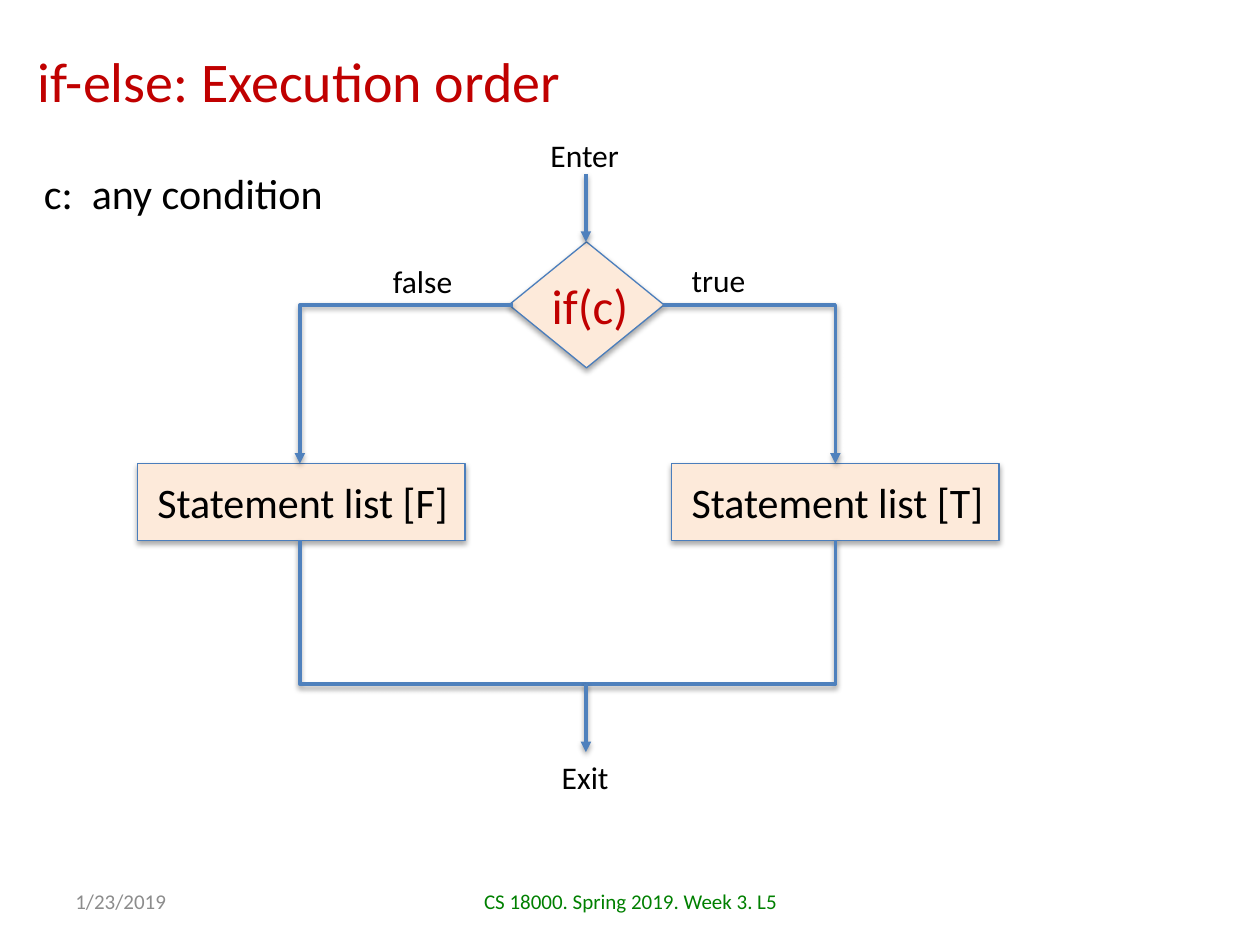
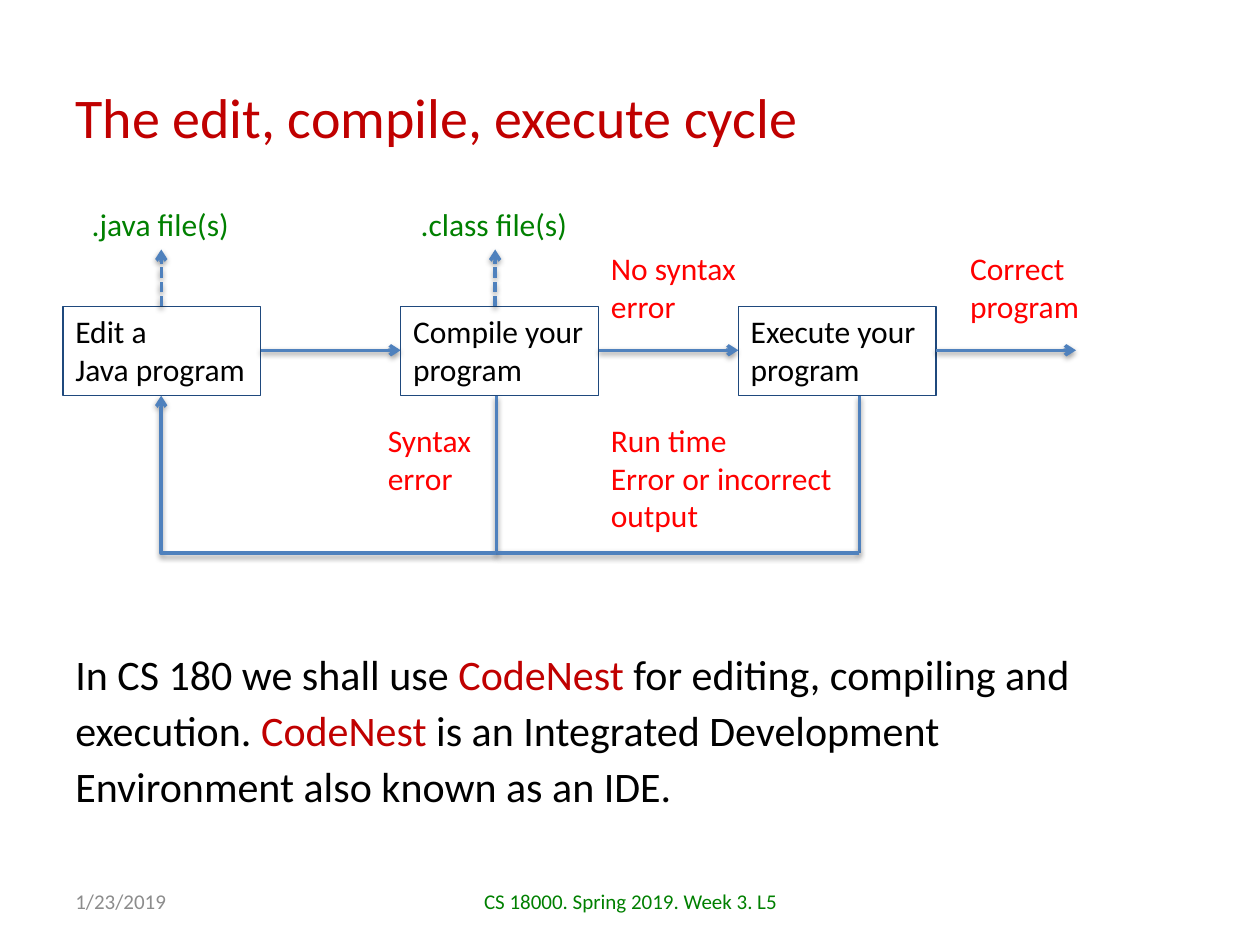
from dataclasses import dataclass

from lxml import etree
from pptx import Presentation
from pptx.dml.color import RGBColor
from pptx.enum.dml import MSO_LINE
from pptx.enum.shapes import MSO_CONNECTOR, MSO_SHAPE
from pptx.enum.text import MSO_ANCHOR, PP_ALIGN
from pptx.oxml.ns import qn
from pptx.util import Emu, Pt

PX = 9144  # one px is a hundredth of an inch
STRAIGHT, ELBOW = MSO_CONNECTOR.STRAIGHT, MSO_CONNECTOR.ELBOW
DIAMOND, RECTANGLE = MSO_SHAPE.DIAMOND, MSO_SHAPE.RECTANGLE
LEFT, CENTER = PP_ALIGN.LEFT, PP_ALIGN.CENTER
TOP, MIDDLE = MSO_ANCHOR.TOP, MSO_ANCHOR.MIDDLE
SHORT_DASH = MSO_LINE.SQUARE_DOT


@dataclass(frozen=True)
class Theme:
    font: str = "Calibri"
    ink: str = "000000"
    title: str = "C00000"
    alert: str = "FF0000"
    green: str = "008000"
    grey: str = "8C8C8C"
    peach: str = "FDEADA"
    node_line: str = "4B7EBC"
    step_line: str = "1F497D"
    wire: str = "4F81BD"
    title_size: int = 32
    condition_size: int = 28
    body_size: int = 24
    label_size: int = 18
    footer_size: int = 12
    wire_width: float = 2
    outline_width: float = 0.75


THEME = Theme()


@dataclass(frozen=True)
class Area:
    left: int
    top: int
    width: int
    height: int

    def emu(self) -> list[Emu]:
        return [Emu(n * PX) for n in (self.left, self.top, self.width, self.height)]


@dataclass(frozen=True)
class Span:
    text: str
    color: str = THEME.ink


@dataclass(frozen=True)
class Label:
    """Text in an area; every entry of lines is one paragraph of spans."""
    area: Area
    lines: list[list[Span]]
    size: int = THEME.label_size
    align: PP_ALIGN = LEFT
    anchor: MSO_ANCHOR = TOP
    wrap: bool = False
    spacing: int = 0
    tab: int = 0


@dataclass(frozen=True)
class Wire:
    """A line; an elbow leaves its start horizontally."""
    start: tuple[int, int]
    end: tuple[int, int]
    kind: MSO_CONNECTOR = STRAIGHT
    arrow: str = ""
    dashed: bool = False


def plain(area: Area, *texts: str, color: str = THEME.ink, size: int = THEME.label_size) -> Label:
    return Label(area, [[Span(text, color)] for text in texts], size)


# Drawing functions

def rgb(color: str) -> RGBColor:
    return RGBColor.from_string(color)


def cast_shadow(item, distance: int, opacity: int) -> None:
    effects = etree.SubElement(item._element.spPr, qn("a:effectLst"))
    shadow = etree.SubElement(effects, qn("a:outerShdw"), blurRad="40000",
                              dist=str(distance), dir="5400000", rotWithShape="0")
    color = etree.SubElement(shadow, qn("a:srgbClr"), val="000000")
    etree.SubElement(color, qn("a:alpha"), val=str(opacity * 1000))


def write(frame, label: Label) -> None:
    frame.word_wrap = label.wrap
    frame.vertical_anchor = label.anchor
    for index, spans in enumerate(label.lines):
        para = frame.add_paragraph() if index else frame.paragraphs[0]
        para.alignment = label.align
        if label.spacing:
            para.line_spacing = Pt(label.spacing)
        if label.tab:
            tabs = etree.SubElement(para._p.get_or_add_pPr(), qn("a:tabLst"))
            etree.SubElement(tabs, qn("a:tab"), pos=str(label.tab * PX), algn="l")
        for span in spans:
            run = para.add_run()
            run.text = span.text
            run.font.name = THEME.font
            run.font.size = Pt(label.size)
            run.font.color.rgb = rgb(span.color)


def add_label(page, label: Label) -> None:
    write(page.shapes.add_textbox(*label.area.emu()).text_frame, label)


def add_node(page, kind: MSO_SHAPE, area: Area, line: str):
    node = page.shapes.add_shape(kind, *area.emu())
    node.shadow.inherit = False
    node.fill.background()
    node.line.color.rgb = rgb(line)
    node.line.width = Pt(THEME.outline_width)
    return node


def add_flow_node(page, kind: MSO_SHAPE, area: Area) -> None:
    node = add_node(page, kind, area, THEME.node_line)
    node.fill.solid()
    node.fill.fore_color.rgb = rgb(THEME.peach)
    properties = node._element.spPr
    properties.remove(properties.find(qn("a:effectLst")))
    cast_shadow(node, 23000, 35)


def add_step(page, label: Label) -> None:
    step = add_node(page, RECTANGLE, label.area, THEME.step_line)
    write(step.text_frame, label)


def add_wire(page, wire: Wire) -> None:
    ends = [Emu(n * PX) for n in (*wire.start, *wire.end)]
    connector = page.shapes.add_connector(wire.kind, *ends)
    if wire.kind == ELBOW:
        connector._element.spPr.find(qn("a:prstGeom")).set("prst", "bentConnector2")
    connector.line.color.rgb = rgb(THEME.wire)
    connector.line.width = Pt(THEME.wire_width)
    if wire.dashed:
        connector.line.dash_style = SHORT_DASH
    if wire.arrow:
        etree.SubElement(connector.line._get_or_add_ln(), qn("a:tailEnd"), type=wire.arrow)
    cast_shadow(connector, 20000, 38)


def add_page(deck, title: str, title_area: Area):
    page = deck.slides.add_slide(deck.slide_layouts[6])
    add_label(page, Label(title_area, [[Span(title, THEME.title)]],
                          THEME.title_size, anchor=MIDDLE, wrap=True))
    add_label(page, Label(Area(342, 695, 317, 40),
                          [[Span("CS 18000. Spring 2019. Week 3. L5", THEME.green)]],
                          THEME.footer_size, CENTER, MIDDLE, True))
    add_label(page, Label(Area(50, 695, 233, 40), [[Span("1/23/2019", THEME.grey)]],
                          THEME.footer_size, anchor=MIDDLE, wrap=True))
    return page


# Slides

def build_execution_order(deck) -> None:
    page = add_page(deck, "if-else: Execution order", Area(20, 25, 836, 77))
    add_label(page, Label(Area(25, 128, 268, 50), [[Span("c:\tany condition")]],
                          THEME.body_size, wrap=True, tab=38))

    # Condition
    middle, branch_y, box_top, box_height, join_y = 465, 242, 368, 61, 543
    add_flow_node(page, DIAMOND, Area(404, 192, 123, 100))
    add_label(page, plain(Area(428, 214, 99, 57), "if(c)",
                          color=THEME.title, size=THEME.condition_size))

    # Branches: box left, statement list, condition corner, box centre
    for left, letter, corner, center in ((109, "F", 407, 238), (533, "T", 526, 663)):
        add_flow_node(page, RECTANGLE, Area(left, box_top, 260, box_height))
        add_label(page, plain(Area(left + 6, box_top + 5, 254, 50),
                              f"Statement list [{letter}]", size=THEME.body_size))
        add_wire(page, Wire((corner, branch_y), (center, box_top), ELBOW, "triangle"))
        add_wire(page, Wire((middle, join_y), (center, box_top + box_height), ELBOW))

    # Entry and exit
    for top in (138, join_y):
        add_wire(page, Wire((middle, top), (middle, top + 54), arrow="triangle"))
    for area, text in ((Area(302, 203, 68, 40), "false"), (Area(539, 202, 63, 40), "true"),
                       (Area(427, 103, 75, 40), "Enter"), (Area(436, 597, 58, 40), "Exit")):
        add_label(page, plain(area, text))


def build_edit_cycle(deck) -> None:
    page = add_page(deck, "The edit, compile, execute cycle", Area(50, 30, 900, 125))

    # Steps, each with an arrow to the next
    step_top, step_height, step_width, pitch = 243, 71, 157, 268
    flow_y, return_y = 278, 439
    steps = (("Edit a", "Java program"), ("Compile your", "program"),
             ("Execute your", "program"))
    for index, lines in enumerate(steps):
        left = 50 + index * pitch
        right = left + step_width
        add_step(page, plain(Area(left, step_top, step_width, step_height), *lines))
        add_wire(page, Wire((right, flow_y), (right + 111, flow_y), arrow="arrow"))

    # Way back to editing
    edit_x, compile_x, execute_x = 128, 394, 682
    step_bottom = step_top + step_height
    for center in (compile_x, execute_x):
        add_wire(page, Wire((center, step_bottom), (center, return_y)))
    add_wire(page, Wire((execute_x, return_y), (compile_x, return_y)))
    add_wire(page, Wire((compile_x, return_y), (edit_x, step_bottom), ELBOW, "arrow"))

    # Outcomes
    for area, lines in (
        (Area(298, 329, 88, 71), ("Syntax", "error")),
        (Area(475, 329, 197, 101), ("Run time", "Error or incorrect", "output")),
        (Area(475, 193, 121, 71), ("No syntax", "error")),
        (Area(760, 193, 108, 71), ("Correct", "program")),
    ):
        add_label(page, plain(area, *lines, color=THEME.alert))

    # Files produced
    for center, area, text in ((edit_x, Area(63, 158, 130, 40), ".java file(s)"),
                               (393, Area(324, 158, 137, 40), ".class file(s)")):
        add_label(page, plain(area, text, color=THEME.green))
        add_wire(page, Wire((center, step_top), (center, 198), arrow="arrow", dashed=True))

    # Tool used in the course
    tool = Span("CodeNest", THEME.title)
    add_label(page, Label(Area(50, 505, 874, 142), [[
        Span("In CS 180 we shall use "), tool,
        Span(" for editing, compiling and execution. "), tool,
        Span(" is an Integrated Development Environment also known as an IDE."),
    ]], THEME.body_size, wrap=True, spacing=32))


def main() -> None:
    deck = Presentation()
    deck.slide_width, deck.slide_height = Emu(1000 * PX), Emu(750 * PX)
    build_execution_order(deck)
    build_edit_cycle(deck)
    deck.save("out.pptx")


if __name__ == "__main__":
    main()
